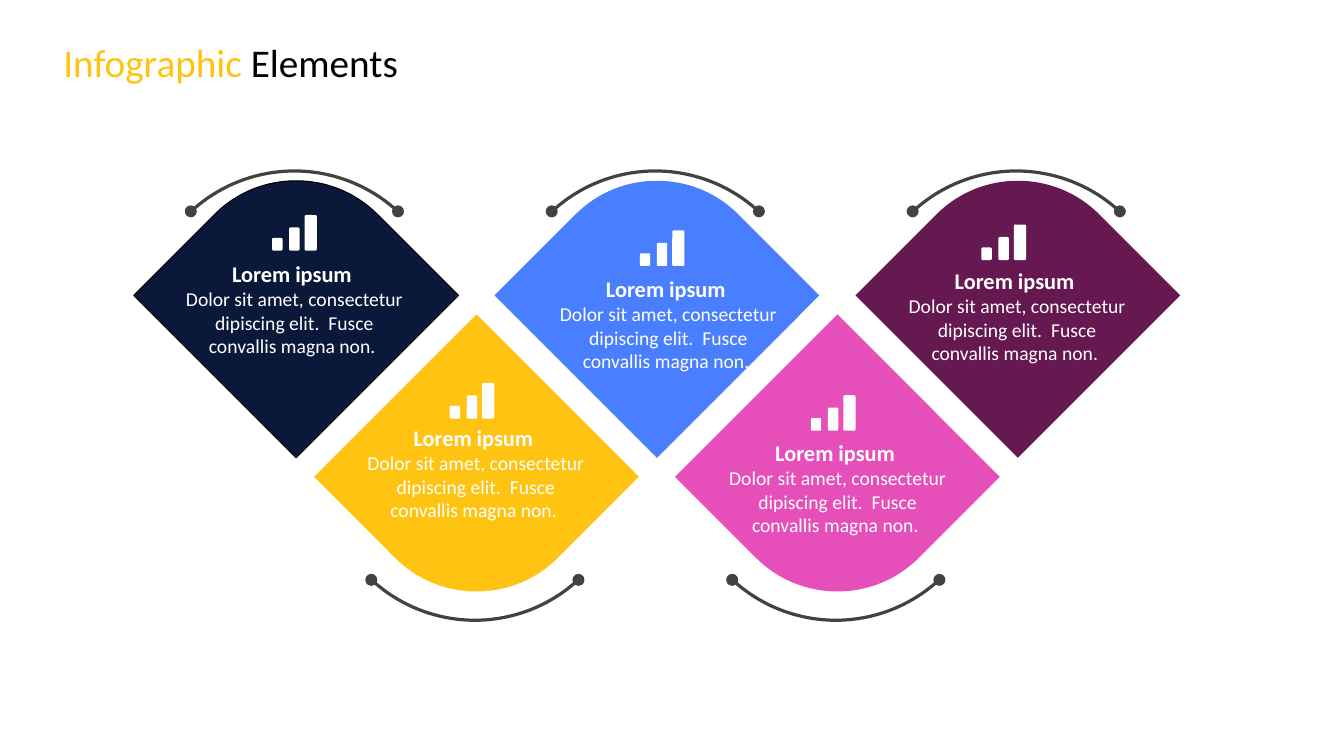
import math

import pptx
import pptx.dml.color
import pptx.enum.shapes
import pptx.enum.text
import pptx.util

Pt = pptx.util.Pt
SHAPE = pptx.enum.shapes.MSO_SHAPE
ALIGN = pptx.enum.text.PP_ALIGN

FONT = "Calibri"
GREY = "424242"
WHITE = "FFFFFF"
HEADING = "Lorem ipsum "
BODY = "Dolor sit amet, consectetur dipiscing elit.  Fusce convallis magna non. "
FIRST_CENTER = 211.5
CENTER_STEP = 128.9
UPPER_SIDE, LOWER_SIDE = 211, 340.6
UPPER_ARC, LOWER_ARC = 121, 444.2
BARS = [(0, 7.4, 9), (12.2, 7.4, 16.5), (23.2, 8.7, 25.4)]
ITEMS = [
    {"fill": "0A193A", "line": "000000", "text": (124.6, 182.2), "icon": (194.4, 179)},
    {"fill": "FFC412", "line": None, "text": (254.2, 299.5), "icon": (321.2, 299)},
    {"fill": "497EFF", "line": None, "text": (391.7, 193), "icon": (457, 190)},
    {"fill": "E64FBA", "line": None, "text": (512.6, 310.3), "icon": (579.2, 307.7)},
    {"fill": "661850", "line": None, "text": (640.8, 187.2), "icon": (701, 185.8)},
]


def color(value):
    return pptx.dml.color.RGBColor.from_string(value)


def paint(shape, fill, line=None):
    shape.shadow.inherit = False
    shape.fill.solid()
    shape.fill.fore_color.rgb = color(fill)
    if line:
        shape.line.color.rgb = color(line)
        shape.line.width = Pt(0.75)
    else:
        shape.line.fill.background()


def add_outline(slide, points, fill, line=None):
    corners = [(Pt(x), Pt(y)) for x, y in points]
    builder = slide.shapes.build_freeform(*corners[0], scale=1.0)
    builder.add_line_segments(corners[1:], close=True)
    paint(builder.convert_to_shape(), fill, line)


def add_preset(shapes, kind, left, top, width, height, fill):
    shape = shapes.add_shape(kind, Pt(left), Pt(top), Pt(width), Pt(height))
    paint(shape, fill)
    return shape


def curve(start, control_1, control_2, end, steps=32):
    points = []
    for step in range(steps + 1):
        t = step / steps
        weights = ((1 - t) ** 3, 3 * t * (1 - t) ** 2, 3 * t * t * (1 - t), t ** 3)
        corners = (start, control_1, control_2, end)
        points.append(tuple(sum(w * corner[axis] for w, corner in zip(weights, corners))
                            for axis in (0, 1)))
    return points


def add_diamond(slide, center, side, direction, fill, line):
    cap = curve((-58.5, -57.5), (-26.5, -90), (26.5, -90), (58.5, -57.5))
    outline = [(0, 116), (-116, 0)] + cap + [(116, 0)]
    points = [(center + x, side + direction * y) for x, y in outline]
    add_outline(slide, points, fill, line)


def add_arc(slide, center, apex, direction):
    outer, inner, half_angle, steps = 110, 107.7, 43, 40
    angles = [math.radians(half_angle * (2 * step / steps - 1)) for step in range(steps + 1)]
    band = [(outer, angle) for angle in angles] + [(inner, angle) for angle in reversed(angles)]
    points = [(center + radius * math.sin(angle),
               apex + direction * (outer - radius * math.cos(angle))) for radius, angle in band]
    add_outline(slide, points, GREY)
    diameter = 8.6
    for offset in (-74, 74):
        add_preset(slide.shapes, SHAPE.OVAL, center + offset - diameter / 2,
                   apex + direction * 30 - diameter / 2, diameter, diameter, GREY)


def add_bar_icon(slide, left, bottom):
    group = slide.shapes.add_group_shape()
    for offset, width, height in BARS:
        bar = add_preset(group.shapes, SHAPE.ROUNDED_RECTANGLE, left + offset,
                         bottom - height, width, height, WHITE)
        bar.adjustments[0] = 0.13


def add_text(slide, paragraphs, left, top, width, height, align=ALIGN.LEFT):
    frame = slide.shapes.add_textbox(Pt(left), Pt(top), Pt(width), Pt(height)).text_frame
    frame.word_wrap = True
    for index, runs in enumerate(paragraphs):
        paragraph = frame.paragraphs[0] if index == 0 else frame.add_paragraph()
        paragraph.alignment = align
        for text, style in runs:
            add_run(paragraph, text, **style)


def add_run(paragraph, text, size, fill, bold=False):
    run = paragraph.add_run()
    run.text = text
    run.font.name = FONT
    run.font.size = Pt(size)
    run.font.bold = bold
    run.font.color.rgb = color(fill)


def main():
    presentation = pptx.Presentation()
    presentation.slide_width = Pt(960)
    presentation.slide_height = Pt(540)
    slide = presentation.slides.add_slide(presentation.slide_layouts[6])

    for index, item in enumerate(ITEMS):
        center = FIRST_CENTER + index * CENTER_STEP
        upper = index % 2 == 0
        direction = 1 if upper else -1
        add_diamond(slide, center, UPPER_SIDE if upper else LOWER_SIDE, direction,
                    item["fill"], item["line"])
        add_arc(slide, center - 1.2, UPPER_ARC if upper else LOWER_ARC, direction)

    caption = [[(HEADING, {"size": 16, "fill": WHITE, "bold": True})],
               [(BODY, {"size": 14, "fill": WHITE})]]
    for item in ITEMS:
        add_text(slide, caption, *item["text"], 171.4, 77.8, align=ALIGN.CENTER)
        add_bar_icon(slide, *item["icon"])

    title = [[("Infographic ", {"size": 28, "fill": "FFC412"}),
              ("Elements", {"size": 28, "fill": "000000"})]]
    add_text(slide, title, 38.2, 23.8, 623.5, 41)
    presentation.save("out.pptx")


if __name__ == "__main__":
    main()
